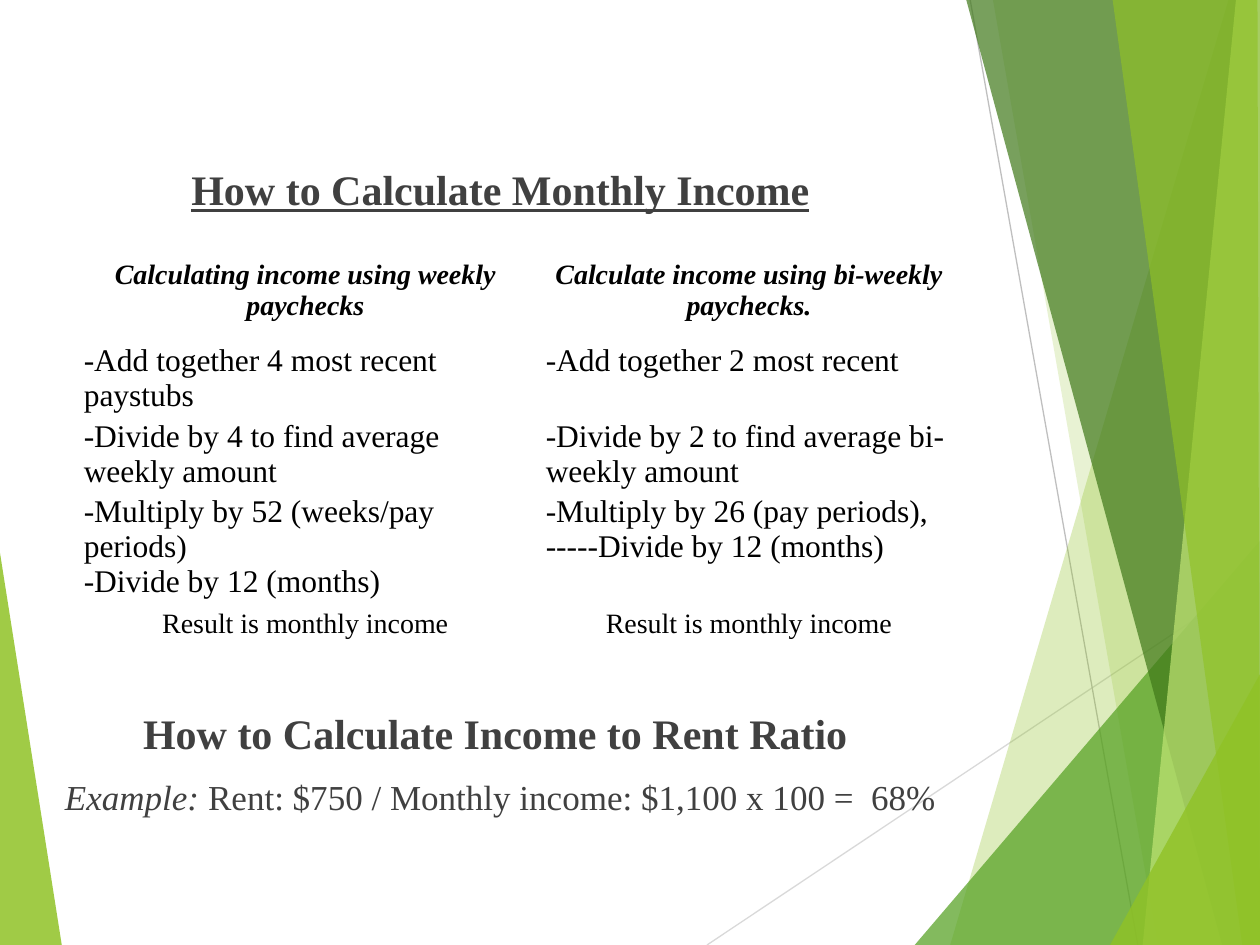
from dataclasses import dataclass

from lxml.etree import SubElement
from pptx import Presentation
from pptx.dml.color import RGBColor
from pptx.enum.shapes import MSO_CONNECTOR
from pptx.enum.text import MSO_ANCHOR, MSO_AUTO_SIZE, PP_ALIGN
from pptx.oxml import parse_xml
from pptx.oxml.ns import nsdecls, qn
from pptx.util import Pt


@dataclass(frozen=True)
class Theme:
    font: str = "Times New Roman"
    ink: str = "404040"
    black: str = "000000"
    white: str = "FFFFFF"
    lime: str = "90C226"
    green: str = "54A021"
    forest: str = "3F7819"
    pale: str = "C0E474"
    heading: int = 24
    example: int = 20
    step: int = 18
    label: int = 16


THEME = Theme()


@dataclass(frozen=True)
class Facet:
    points: tuple[tuple[float, float], ...]
    color: str
    opacity: int


@dataclass(frozen=True)
class Ray:
    start: tuple[float, float]
    end: tuple[float, float]
    color: str


@dataclass(frozen=True)
class Row:
    height: float
    cells: tuple[tuple[str, ...], tuple[str, ...]]
    size: int = THEME.step
    align: PP_ALIGN = PP_ALIGN.LEFT
    emphasis: bool = False
    top_line: int = 1
    bottom_line: int = 1


W, H = 720, 540

LEFT_FACET = Facet(((0, 316), (35.3, H), (0, H)), THEME.lime, 85)
RAYS = (
    Ray((404, H), (W, 329), "D9D9D9"),
    Ray((554.4, 0), (650.2, H), "BFBFBF"),
)
RIGHT_FACETS = (
    Facet(((702, 0), (543, H), (W, H), (W, 0)), THEME.lime, 30),
    Facet(((567.4, 0), (661.7, H), (W, H), (W, 0)), THEME.lime, 20),
    Facet(((522.7, H), (W, 309), (W, H)), THEME.green, 72),
    Facet(((552.2, 0), (698.4, H), (W, H), (W, 0)), THEME.forest, 70),
    Facet(((706.3, 0), (653, H), (W, H), (W, 0)), THEME.pale, 70),
    Facet(((635.8, 0), (709.9, H), (W, H), (718.6, 0)), THEME.lime, 65),
    Facet(((634.3, H), (W, 385.2), (W, H)), THEME.lime, 80),
)

COLUMN_WIDTHS = (264, 243)
ROWS = (
    Row(48, (("Calculating income using weekly paychecks",),
             ("Calculate income using bi-weekly paychecks.",)),
        THEME.label, PP_ALIGN.CENTER, emphasis=True, bottom_line=3),
    Row(43.2, (("-Add together 4 most recent paystubs",),
               ("-Add together 2 most recent",)), top_line=3),
    Row(43.2, (("-Divide by 4 to find average weekly amount",),
               ("-Divide by 2 to find average bi-weekly amount",))),
    Row(65, (("-Multiply by 52 (weeks/pay periods)", "-Divide by 12 (months)"),
             ("-Multiply by 26 (pay periods), -----Divide by 12 (months)",)),
        bottom_line=3),
    Row(21.6, (("Result is monthly income",),) * 2,
        THEME.label, PP_ALIGN.CENTER, top_line=3),
)


def rgb(color: str) -> RGBColor:
    return RGBColor.from_string(color)


def draw_facet(s, facet: Facet) -> None:
    start, *rest = [(Pt(x), Pt(y)) for x, y in facet.points]
    builder = s.shapes.build_freeform(*start)
    builder.add_line_segments(rest)
    sp = builder.convert_to_shape()
    sp.shadow.inherit = False
    sp.line.fill.background()
    sp.fill.solid()
    sp.fill.fore_color.rgb = rgb(facet.color)
    color = sp.fill._xPr.find(qn("a:solidFill"))[0]
    SubElement(color, qn("a:alpha"), val=str(facet.opacity * 1000))


def draw_ray(s, ray: Ray) -> None:
    ends = [Pt(v) for v in ray.start + ray.end]
    line = s.shapes.add_connector(MSO_CONNECTOR.STRAIGHT, *ends)
    line.line.color.rgb = rgb(ray.color)
    line.line.width = Pt(0.75)
    SubElement(line._element.spPr, qn("a:effectLst"))


def add_run(p, text: str, size: int, color: str = THEME.ink, bold: bool = False,
            italic: bool = False, underline: bool = False) -> None:
    r = p.add_run()
    r.text = text
    font = r.font
    font.name, font.size = THEME.font, Pt(size)
    font.bold, font.italic, font.underline = bold, italic, underline
    font.color.rgb = rgb(color)


def place_text(sp, top: float, height: float):
    """Set the shared heading column and return the text frame."""
    sp.left, sp.top, sp.width, sp.height = Pt(0), Pt(top), Pt(572), Pt(height)
    tf = sp.text_frame
    tf.word_wrap = True
    tf.auto_size = MSO_AUTO_SIZE.NONE
    tf.vertical_anchor = MSO_ANCHOR.TOP
    tf.paragraphs[0].alignment = PP_ALIGN.CENTER
    return tf


def set_borders(cell, row: Row) -> None:
    sides = (("L", 1), ("R", 1), ("T", row.top_line), ("B", row.bottom_line))
    for i, (side, width) in enumerate(sides):
        cell._tc.get_or_add_tcPr().insert(i, parse_xml(
            f'<a:ln{side} {nsdecls("a")} w="{Pt(width)}"><a:solidFill>'
            f'<a:srgbClr val="{THEME.white}"/></a:solidFill></a:ln{side}>'))


def fill_cell(cell, lines: tuple[str, ...], row: Row) -> None:
    cell.margin_left = cell.margin_right = Pt(5.4)
    cell.margin_top = cell.margin_bottom = Pt(0)
    cell.fill.background()
    set_borders(cell, row)
    tf = cell.text_frame
    for i, text in enumerate(lines):
        p = tf.add_paragraph() if i else tf.paragraphs[0]
        p.alignment = row.align
        add_run(p, text, row.size, THEME.black, row.emphasis, row.emphasis)


def draw_table(s) -> None:
    height = sum(row.height for row in ROWS)
    table = s.shapes.add_table(len(ROWS), len(COLUMN_WIDTHS), Pt(42.5), Pt(148.3),
                               Pt(sum(COLUMN_WIDTHS)), Pt(height)).table
    table.first_row = table.horz_banding = False
    for column, width in zip(table.columns, COLUMN_WIDTHS):
        column.width = Pt(width)
    for table_row, row in zip(table.rows, ROWS):
        table_row.height = Pt(row.height)
        for cell, lines in zip(table_row.cells, row.cells):
            fill_cell(cell, lines, row)


def main() -> None:
    prs = Presentation()
    prs.slide_width, prs.slide_height = Pt(W), Pt(H)
    s = prs.slides.add_slide(prs.slide_layouts[5])

    draw_facet(s, LEFT_FACET)
    for ray in RAYS:
        draw_ray(s, ray)
    for facet in RIGHT_FACETS:
        draw_facet(s, facet)

    tf = place_text(s.shapes.title, 90, 40)
    add_run(tf.paragraphs[0], "How to Calculate Monthly Income", THEME.heading,
            bold=True, underline=True)
    draw_table(s)

    ratio = s.shapes.add_textbox(Pt(0), Pt(0), Pt(0), Pt(0))
    tf = place_text(ratio, 401, 76)
    add_run(tf.paragraphs[0], "How to Calculate Income to Rent Ratio ",
            THEME.heading, bold=True)
    p = tf.add_paragraph()
    p.alignment, p.space_before = PP_ALIGN.CENTER, Pt(10)
    add_run(p, "Example: ", THEME.example, italic=True)
    add_run(p, "Rent: $750 / Monthly income: $1,100 x 100 =  68%", THEME.example)

    prs.save("out.pptx")


if __name__ == "__main__":
    main()
